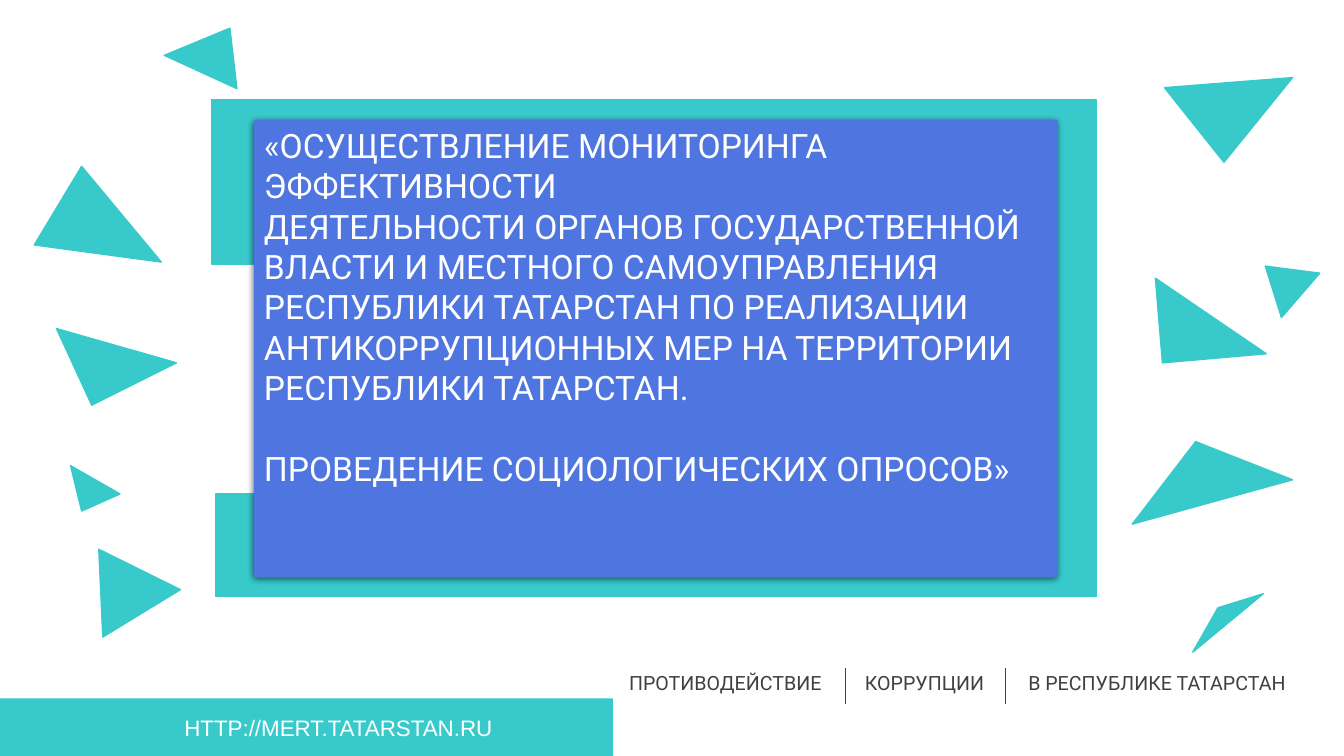
import pptx
import pptx.util
import pptx.dml.color
import pptx.enum.shapes
import pptx.enum.text
import pptx.oxml
import pptx.oxml.ns
from lxml import etree

PX = 9144  # 100 px to the inch
COLORS = {"teal": "38CACB", "blue": "4E75E0", "dark": "404040",
          "white": "FFFFFF", "shadow": "000000"}
FORMATS = {
    "title": {"size": pptx.util.Pt(24), "name": "Roboto"},
    "caption": {"size": pptx.util.Pt(14), "name": "Roboto"},
    "address": {"size": pptx.util.Pt(16), "name": "Arial"},
}
TITLE = [
    "«ОСУЩЕСТВЛЕНИЕ МОНИТОРИНГА ЭФФЕКТИВНОСТИ",
    "ДЕЯТЕЛЬНОСТИ ОРГАНОВ ГОСУДАРСТВЕННОЙ ВЛАСТИ И МЕСТНОГО САМОУПРАВЛЕНИЯ "
    "РЕСПУБЛИКИ ТАТАРСТАН ПО РЕАЛИЗАЦИИ АНТИКОРРУПЦИОННЫХ МЕР НА ТЕРРИТОРИИ",
    "РЕСПУБЛИКИ ТАТАРСТАН.",
    "ПРОВЕДЕНИЕ СОЦИОЛОГИЧЕСКИХ ОПРОСОВ»",
]
# Corner points, relative to the top left of each side region
LEFT_SHARDS = [
    [(22, 298), (141, 332), (57, 374)],
    [(64, 517), (145, 557), (68, 604)],
    [(36, 434), (47, 479), (85, 462)],
    [(194, 0), (201, 60), (129, 27)],
    [(0, 215), (47, 137), (126, 232)],
]
RIGHT_SHARDS = [
    [(85, 526), (60, 570), (130, 512)],
    [(32, 10), (159, 0), (91, 84)],
    [(132, 187), (186, 194), (148, 238)],
    [(23, 199), (30, 283), (133, 274)],
    [(63, 361), (0, 443), (159, 399), (70, 364)],
]


def emu(*lengths):
    return [pptx.util.Emu(n * PX) for n in lengths]


def rgb(name):
    return pptx.dml.color.RGBColor.from_string(COLORS[name])


def paint(shape, fill, outlined=True):
    shape.shadow.inherit = False
    shape.fill.solid()
    shape.fill.fore_color.rgb = rgb(fill)
    if outlined:
        shape.line.color.rgb = rgb(fill)
        shape.line.width = pptx.util.Pt(1)
    else:
        shape.line.fill.background()


def add_rect(s, box, fill, outlined=True):
    rect = s.shapes.add_shape(
        pptx.enum.shapes.MSO_SHAPE.RECTANGLE, *emu(*box))
    paint(rect, fill, outlined)
    return rect


def write(tf, lines, style, color):
    for i, line in enumerate(lines):
        p = tf.paragraphs[0] if i == 0 else tf.add_paragraph()
        p.alignment = pptx.enum.text.PP_ALIGN.LEFT
        r = p.add_run()
        r.text = line
        for key, value in FORMATS[style].items():
            setattr(r.font, key, value)
        r.font.color.rgb = rgb(color)


def add_label(s, box, text, style, color):
    tf = s.shapes.add_textbox(*emu(*box)).text_frame
    tf.word_wrap = False
    write(tf, [text], style, color)


def add_frame(s, box):
    """Broken teal frame, open on the left side."""
    x, y, w, h = box
    bars = [
        (x, y, 53, 163),                     # upper left
        (x + 52, y, w - 90, 47),             # top
        (x + w - 38, y, 38, h),              # right
        (x + 4, y + h - 102, 43, 102),       # lower left
        (x + 43, y + h - 36, w - 43, 36),    # bottom
    ]
    for bar in bars:
        add_rect(s, bar, "teal")


def add_footer(s, box):
    """Address on a teal bar."""
    x, y, w, h = box
    add_rect(s, box, "teal", outlined=False)
    add_label(s, (x + 173, y + 11, 329, 37), "HTTP://MERT.TATARSTAN.RU",
              "address", "white")


def add_captions(s, box):
    """Three captions with thin dividers between them."""
    x, y, w, h = box
    for dx, width, text in [(0, 222, "ПРОТИВОДЕЙСТВИЕ"),
                            (234, 143, "КОРРУПЦИИ"),
                            (396, 288, "В РЕСПУБЛИКЕ ТАТАРСТАН")]:
        add_label(s, (x + dx, y, width, h), text, "caption", "dark")
    for dx in (224, 383):
        divider = s.shapes.add_connector(
            pptx.enum.shapes.MSO_CONNECTOR.STRAIGHT,
            *emu(x + dx, y + 2, x + dx, y + 37))
        divider.line.color.rgb = rgb("dark")
        divider.line.width = pptx.util.Pt(0.5)
        etree.SubElement(divider._element.spPr,
                         pptx.oxml.ns.qn("a:effectLst"))


def add_shards(s, box, shards):
    """Scattered pointed shapes beside the frame."""
    x, y = box[:2]
    for shard in shards:
        start, *rest = [(x + dx, y + dy) for dx, dy in shard]
        outline = s.shapes.build_freeform(*start, scale=PX)
        outline.add_line_segments(rest, close=True)
        paint(outline.convert_to_shape(), "teal")


def add_title_panel(s, box):
    """Blue panel with a soft shadow and the title."""
    panel = add_rect(s, box, "blue", outlined=False)
    effects = panel._element.spPr.find(pptx.oxml.ns.qn("a:effectLst"))
    effects.append(pptx.oxml.parse_xml(
        f'<a:outerShdw {pptx.oxml.ns.nsdecls("a")} blurRad="57150" '
        'dist="19050" dir="5400000" algn="ctr" rotWithShape="0">'
        f'<a:srgbClr val="{COLORS["shadow"]}"><a:alpha val="63000"/>'
        '</a:srgbClr></a:outerShdw>'))
    tf = panel.text_frame
    tf.word_wrap = True
    tf.vertical_anchor = pptx.enum.text.MSO_ANCHOR.TOP
    write(tf, TITLE, "title", "white")
    tf.paragraphs[-1].space_before = pptx.util.Pt(28.8)


def main():
    prs = pptx.Presentation()
    prs.slide_width, prs.slide_height = emu(1333, 750)
    s = prs.slides.add_slide(prs.slide_layouts[6])
    add_footer(s, (0, 693, 608, 57))
    add_frame(s, (210, 99, 877, 493))
    add_captions(s, (614, 661, 684, 34))
    add_shards(s, (34, 28, 201, 604), LEFT_SHARDS)
    add_shards(s, (1123, 77, 186, 570), RIGHT_SHARDS)
    add_title_panel(s, (252, 119, 797, 454))
    prs.save("out.pptx")


if __name__ == "__main__":
    main()
